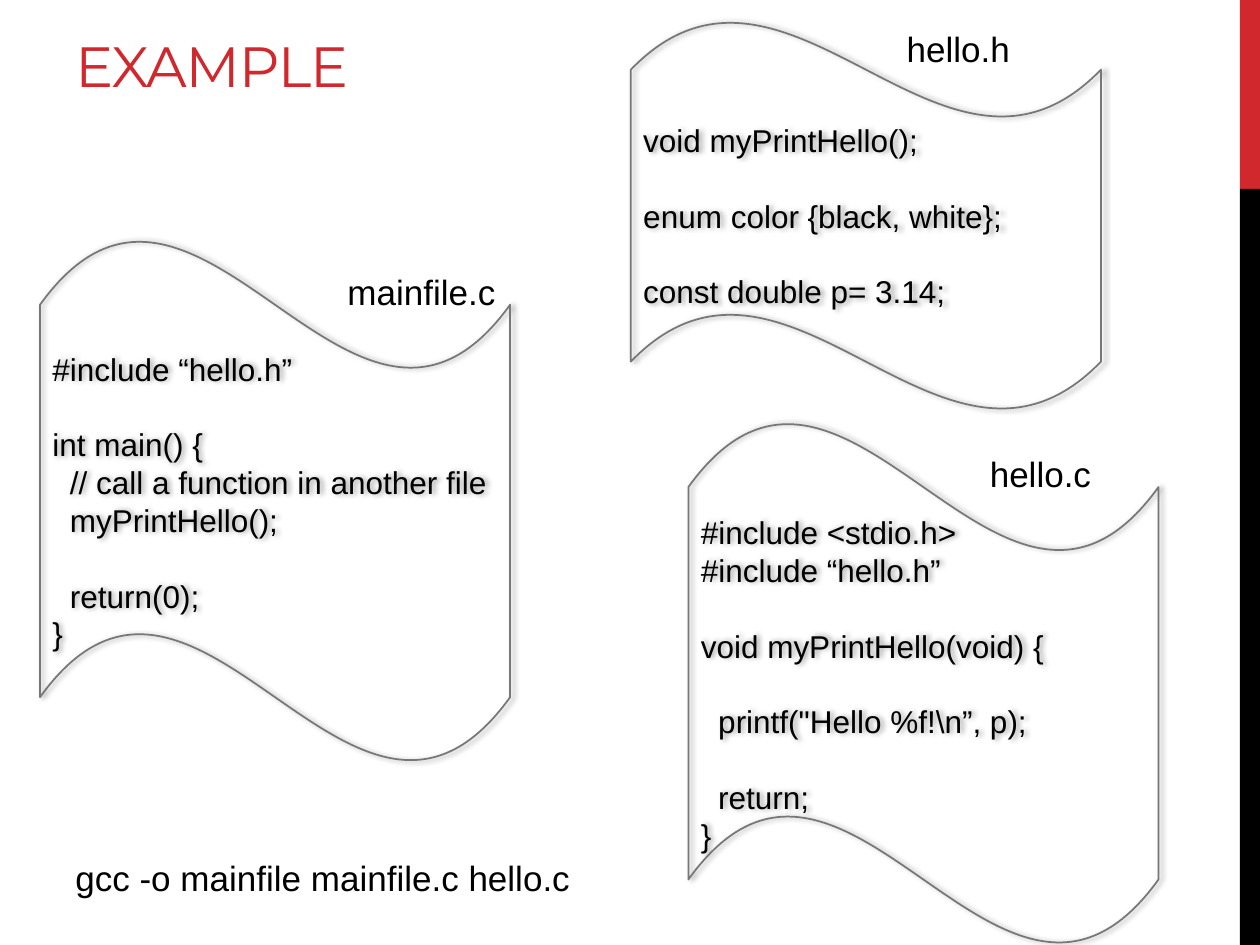
import pptx
import pptx.dml.color
import pptx.enum.shapes
import pptx.enum.text
import pptx.oxml
import pptx.oxml.ns
import pptx.util

Pt = pptx.util.Pt
ANCHOR = pptx.enum.text.MSO_ANCHOR
SHAPE = pptx.enum.shapes.MSO_SHAPE


def color(value):
    return pptx.dml.color.RGBColor.from_string(value)


class CodeSlide:
    red, black, gray = "D1282E", "000000", "777777"
    heading_font, body_font = "Montserrat", "Arial"
    code_size, label_size, line_pitch = 18, 20, 21.6
    page_width, page_height = 720, 540

    def __init__(self):
        self.deck = pptx.Presentation()
        self.deck.slide_width = Pt(self.page_width)
        self.deck.slide_height = Pt(self.page_height)
        self.page = self.deck.slides.add_slide(self.deck.slide_layouts[6])

    def style(self, paragraph, font, size, value):
        paragraph.font.name = font
        paragraph.font.size = Pt(size)
        paragraph.font.color.rgb = color(value)

    def bar(self, left, top, width, height, value):
        box = self.page.shapes.add_shape(
            SHAPE.RECTANGLE, Pt(left), Pt(top), Pt(width), Pt(height))
        box.shadow.inherit = False
        box.fill.solid()
        box.fill.fore_color.rgb = color(value)
        box.line.fill.background()

    def title(self, text, left, top, width, height):
        box = self.page.shapes.add_textbox(Pt(left), Pt(top), Pt(width), Pt(height))
        box.text_frame.word_wrap = True
        box.text_frame.vertical_anchor = ANCHOR.BOTTOM
        paragraph = box.text_frame.paragraphs[0]
        span = paragraph.add_run()
        span.text = text
        span.font._element.set("spc", "-60")
        self.style(paragraph, self.heading_font, 32.4, self.red)

    def label(self, text, left, top, width, parent=None):
        shapes = (parent or self.page).shapes
        box = shapes.add_textbox(Pt(left), Pt(top), Pt(width), Pt(31.5))
        box.text_frame.word_wrap = False
        box.text_frame.auto_size = pptx.enum.text.MSO_AUTO_SIZE.SHAPE_TO_FIT_TEXT
        paragraph = box.text_frame.paragraphs[0]
        paragraph.text = text
        self.style(paragraph, self.body_font, self.label_size, self.black)

    def soft_shadow(self, box):
        box.shadow.inherit = False
        effects = box._element.spPr.find(pptx.oxml.ns.qn("a:effectLst"))
        effects.append(pptx.oxml.parse_xml(
            f'<a:outerShdw {pptx.oxml.ns.nsdecls("a")} blurRad="{Pt(3.1)}"'
            f' dist="{Pt(1.8)}" dir="0" rotWithShape="0">'
            f'<a:srgbClr val="{self.black}"><a:alpha val="40000"/></a:srgbClr>'
            '</a:outerShdw>'))

    def code(self, frame, source):
        """Each blank source line becomes space before the next line."""
        frame.word_wrap = True
        frame.vertical_anchor = ANCHOR.MIDDLE
        paragraph, gap = None, 0
        for line in source.strip().split("\n"):
            if not line:
                gap += self.line_pitch
                continue
            paragraph = frame.add_paragraph() if paragraph else frame.paragraphs[0]
            paragraph.text = line
            paragraph.alignment = pptx.enum.text.PP_ALIGN.LEFT
            paragraph.line_spacing = Pt(self.line_pitch)
            paragraph.space_before = Pt(gap)
            self.style(paragraph, self.body_font, self.code_size, self.black)
            gap = 0

    def file(self, name, source, place, label_place):
        """A wave-shaped sheet of code grouped with its file name."""
        group = self.page.shapes.add_group_shape()
        left, top, height = place
        box = group.shapes.add_shape(
            SHAPE.WAVE, Pt(left), Pt(top), Pt(268.6), Pt(height))
        box.fill.background()
        box.line.color.rgb = color(self.gray)
        box.line.width = Pt(1)
        self.soft_shadow(box)
        self.code(box.text_frame, source)
        self.label(name, *label_place, parent=group)


MAIN_FILE = """
#include “hello.h”

int main() {
  // call a function in another file
  myPrintHello();

  return(0);
}
"""

HELLO_SOURCE = """
#include <stdio.h>
#include “hello.h”

void myPrintHello(void) {

  printf("Hello %f!\\n”, p);

  return;
}
"""

HELLO_HEADER = """
void myPrintHello();

enum color {black, white};

const double p= 3.14;
"""


def main():
    slide = CodeSlide()

    # Side bars and title
    slide.bar(708.5, 0, 11.5, 108, slide.red)
    slide.bar(708.5, 108, 11.5, 432, slide.black)
    slide.title("EXAMPLE", 36, 12, 649.5, 47.8)

    # Files: sheet (left, top, height), then label (left, top, width)
    slide.file("mainfile.c", MAIN_FILE, (22.9, 136.8, 299), (191.5, 151.2, 100))
    slide.file("hello.c", HELLO_SOURCE, (393.4, 241, 299), (558.5, 254.9, 73))
    slide.file("hello.h", HELLO_HEADER, (360.5, 12, 222.5), (511, 12, 74))

    # Compile command
    slide.label("gcc -o mainfile mainfile.c hello.c", 36, 486, 304)

    slide.deck.save("out.pptx")


if __name__ == "__main__":
    main()
